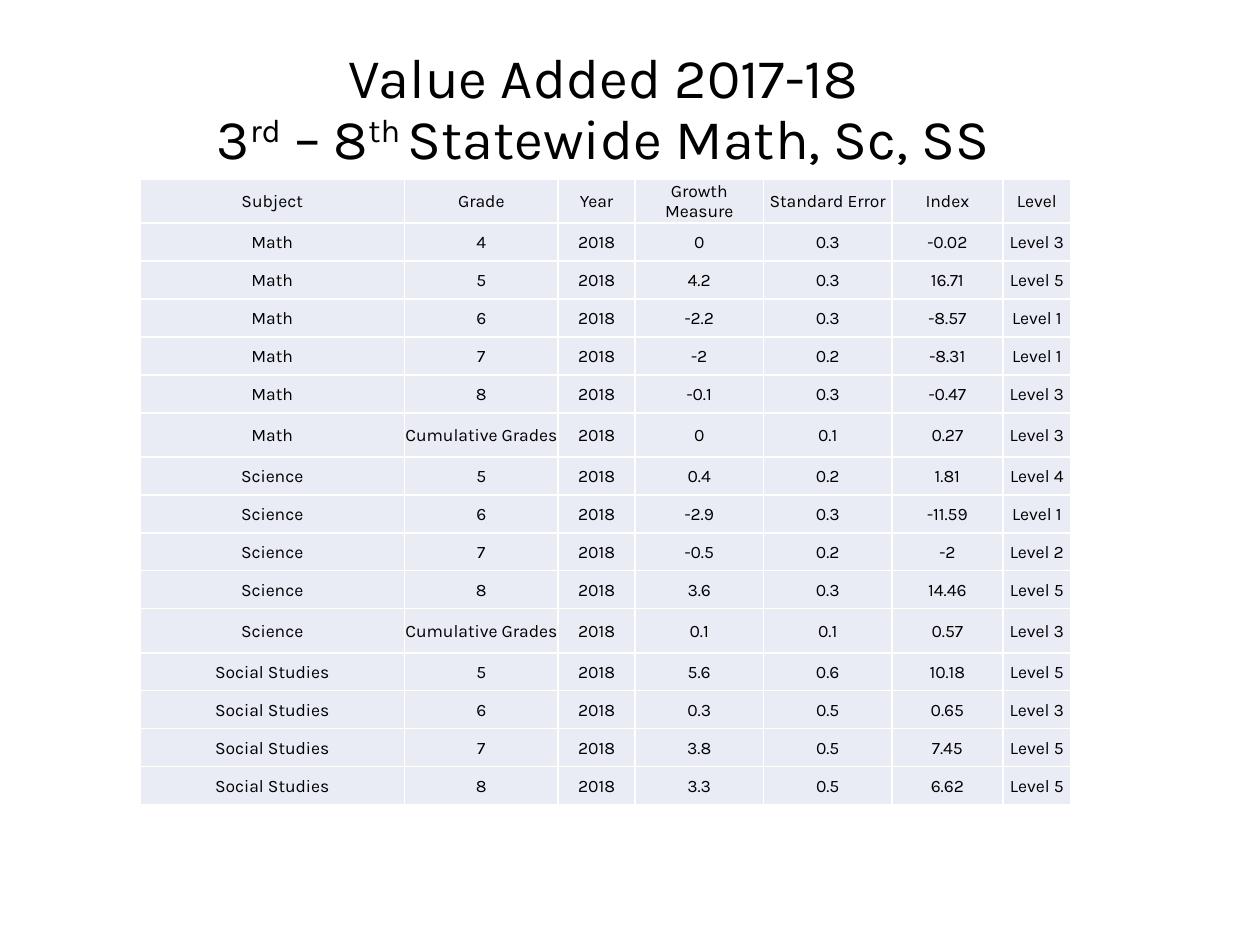
from dataclasses import dataclass

from lxml import etree
from pptx import Presentation
from pptx.dml.color import RGBColor
from pptx.enum.text import MSO_ANCHOR, PP_ALIGN
from pptx.oxml.ns import qn
from pptx.util import Inches, Pt

CENTER = PP_ALIGN.CENTER
MIDDLE = MSO_ANCHOR.MIDDLE
COLORS = {"text": "000000", "cell": "E9EBF5", "border": "FFFFFF"}
FONT = "Karla"
YEAR = "2018"
CUMULATIVE = "Cumulative Grades"
HEADERS = ("Subject", "Grade", "Year", "Growth Measure", "Standard Error", "Index", "Level")
COLUMN_WIDTHS = (2.1, 1.22, 0.61, 1.02, 1.02, 0.88, 0.54)
TABLE_LEFT, TABLE_TOP, TABLE_HEIGHT = 1.11, 1.42, 4.97
TALL_ROW = 0.35
TITLE_LINES = (
    (("Value Added 2017-18", False),),
    (("3", False), ("rd", True), (" – 8", False), ("th ", True), ("Statewide Math, Sc, SS", False)),
)


@dataclass(frozen=True)
class Result:
    subject: str
    grade: str
    growth: str
    error: str
    index: str
    level: int

    def texts(self) -> tuple[str, ...]:
        return (self.subject, self.grade, YEAR, self.growth, self.error, self.index, f"Level {self.level}")


RESULTS = (
    Result("Math", "4", "0", "0.3", "-0.02", 3),
    Result("Math", "5", "4.2", "0.3", "16.71", 5),
    Result("Math", "6", "-2.2", "0.3", "-8.57", 1),
    Result("Math", "7", "-2", "0.2", "-8.31", 1),
    Result("Math", "8", "-0.1", "0.3", "-0.47", 3),
    Result("Math", CUMULATIVE, "0", "0.1", "0.27", 3),
    Result("Science", "5", "0.4", "0.2", "1.81", 4),
    Result("Science", "6", "-2.9", "0.3", "-11.59", 1),
    Result("Science", "7", "-0.5", "0.2", "-2", 2),
    Result("Science", "8", "3.6", "0.3", "14.46", 5),
    Result("Science", CUMULATIVE, "0.1", "0.1", "0.57", 3),
    Result("Social Studies", "5", "5.6", "0.6", "10.18", 5),
    Result("Social Studies", "6", "0.3", "0.5", "0.65", 3),
    Result("Social Studies", "7", "3.8", "0.5", "7.45", 5),
    Result("Social Studies", "8", "3.3", "0.5", "6.62", 5),
)


def add_text(paragraph, text: str, *, size: float, superscript: bool = False) -> None:
    paragraph.alignment = CENTER
    run = paragraph.add_run()
    run.text = text
    run.font.name = FONT
    run.font.size = Pt(size)
    run.font.bold = False
    run.font.color.rgb = RGBColor.from_string(COLORS["text"])
    if superscript:
        run._r.get_or_add_rPr().set("baseline", "30000")


def add_title(slide) -> None:
    shape = slide.shapes.add_textbox(Inches(0.48), Inches(0.25), Inches(8.62), Inches(1.26))
    shape.text_frame.word_wrap = True
    shape.text_frame.vertical_anchor = MIDDLE
    paragraph = shape.text_frame.paragraphs[0]
    paragraph.line_spacing = 0.9
    for number, line in enumerate(TITLE_LINES):
        if number:
            paragraph.add_line_break()
        for text, superscript in line:
            add_text(paragraph, text, size=32, superscript=superscript)


def add_borders(cell) -> None:
    properties = cell._tc.get_or_add_tcPr()
    for side in ("lnL", "lnR", "lnT", "lnB"):
        line = etree.SubElement(properties, qn(f"a:{side}"), w=str(Pt(1)))
        fill = etree.SubElement(line, qn("a:solidFill"))
        etree.SubElement(fill, qn("a:srgbClr"), val=COLORS["border"])


def format_cell(cell, text: str) -> None:
    cell.margin_left = cell.margin_right = cell.margin_bottom = 0
    cell.margin_top = Inches(0.01)
    cell.vertical_anchor = MIDDLE
    add_borders(cell)
    cell.fill.solid()
    cell.fill.fore_color.rgb = RGBColor.from_string(COLORS["cell"])
    add_text(cell.text_frame.paragraphs[0], text, size=10)


def add_results_table(slide) -> None:
    rows = [HEADERS, *(result.texts() for result in RESULTS)]
    tall = [row == HEADERS or CUMULATIVE in row for row in rows]
    regular_row = (TABLE_HEIGHT - TALL_ROW * sum(tall)) / (len(rows) - sum(tall))
    table = slide.shapes.add_table(
        len(rows), len(HEADERS), Inches(TABLE_LEFT), Inches(TABLE_TOP),
        Inches(sum(COLUMN_WIDTHS)), Inches(TABLE_HEIGHT),
    ).table
    table.first_row = False
    table.horz_banding = False
    for column, width in zip(table.columns, COLUMN_WIDTHS):
        column.width = Inches(width)
    for row, texts, is_tall in zip(table.rows, rows, tall):
        row.height = Inches(TALL_ROW if is_tall else regular_row)
        for cell, text in zip(row.cells, texts):
            format_cell(cell, text)


def main() -> None:
    presentation = Presentation()
    presentation.slide_width = Inches(10)
    presentation.slide_height = Inches(7.5)
    slide = presentation.slides.add_slide(presentation.slide_layouts[6])
    add_title(slide)
    add_results_table(slide)
    presentation.save("out.pptx")


if __name__ == "__main__":
    main()
